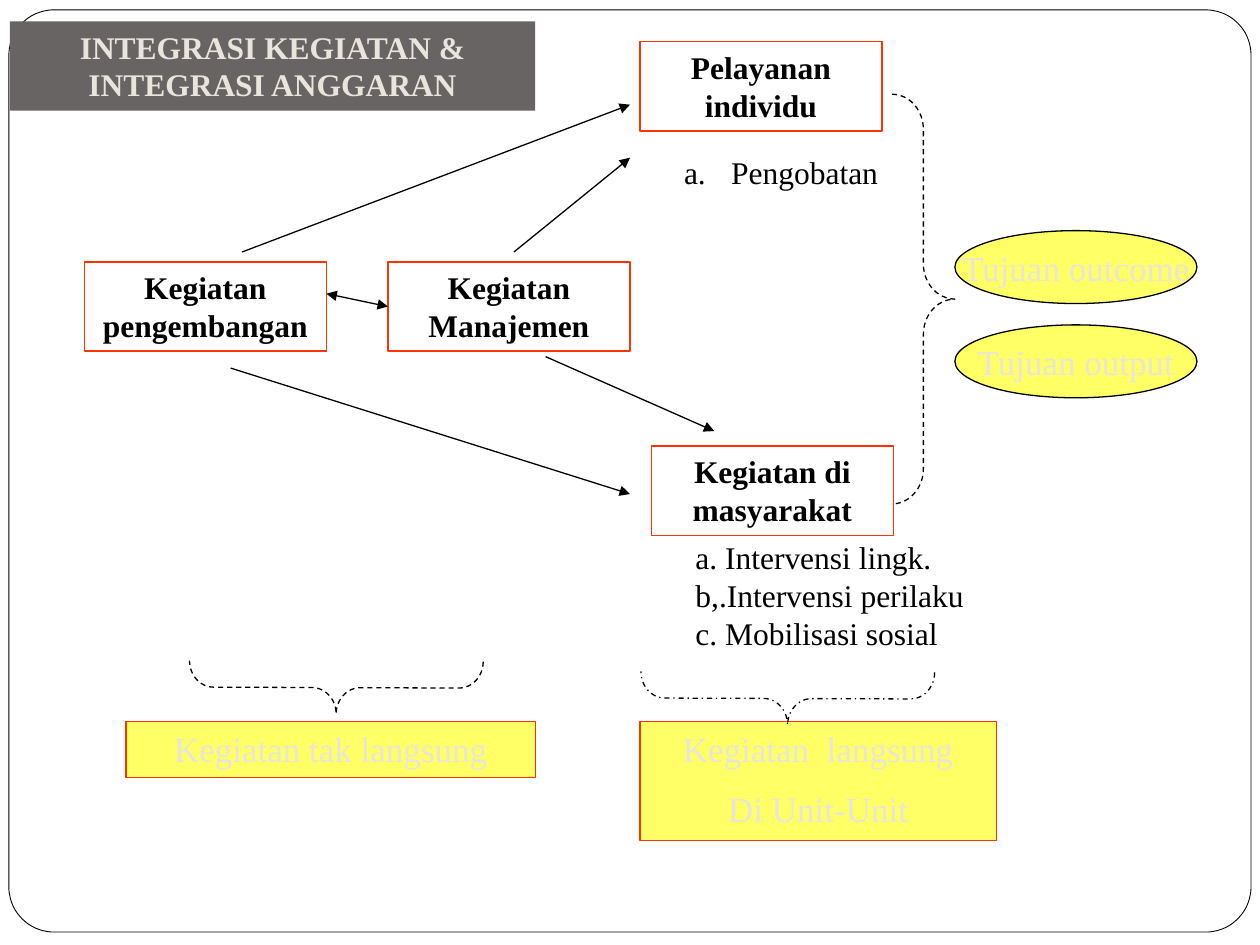
import pptx
import pptx.dml.color
import pptx.enum.dml
import pptx.enum.shapes
import pptx.enum.text
import pptx.oxml.ns
import pptx.util
from lxml import etree

Cm = pptx.util.Cm
Pt = pptx.util.Pt
Shape = pptx.enum.shapes.MSO_SHAPE
Align = pptx.enum.text.PP_ALIGN
Anchor = pptx.enum.text.MSO_ANCHOR
Dash = pptx.enum.dml.MSO_LINE

FONT = "Times New Roman"
BLACK, WHITE, RED = "000000", "FFFFFF", "FF3300"
YELLOW, GREY, CREAM = "FFFF66", "696464", "E9E5DC"
BOX_WIDTH, BOX_HEIGHT = 4.88, 1.8


def color(value):
    """Turn a hex string into a colour."""
    return pptx.dml.color.RGBColor.from_string(value)


def add_xml(parent, tag, **attributes):
    """Append a DrawingML element to a parent element."""
    return etree.SubElement(parent, pptx.oxml.ns.qn(tag), attributes)


def write(shape, text, size, ink, bold=False, align=Align.CENTER, anchor=Anchor.TOP, wrap=True):
    """Put formatted text in a shape."""
    frame = shape.text_frame
    frame.text = text
    frame.word_wrap = wrap
    frame.vertical_anchor = anchor
    frame.auto_size = pptx.enum.text.MSO_AUTO_SIZE.NONE
    for index, para in enumerate(frame.paragraphs):
        para.alignment = align
        para.space_before = Pt(size / 2 if index else 0)
        for span in para.runs:
            span.font.name = FONT
            span.font.size = Pt(size)
            span.font.bold = bold
            span.font.color.rgb = color(ink)


def draw_shape(page, kind, box, line, fill=None, weight=0.75, dash=None):
    """Draw a preset shape with a plain fill and outline."""
    shape = page.shapes.add_shape(kind, *map(Cm, box))
    shape.shadow.inherit = False
    if fill:
        shape.fill.solid()
        shape.fill.fore_color.rgb = color(fill)
    else:
        shape.fill.background()
    shape.line.color.rgb = color(line)
    shape.line.width = Pt(weight)
    if dash:
        shape.line.dash_style = dash
    return shape


def draw_arrow(page, start, end, both_ways=False):
    """Draw a straight arrow between two points."""
    arrow = page.shapes.add_connector(
        pptx.enum.shapes.MSO_CONNECTOR.STRAIGHT, *map(Cm, start + end))
    arrow.line.color.rgb = color(BLACK)
    arrow.line.width = Pt(0.75)
    outline = arrow.line._get_or_add_ln()
    if both_ways:
        add_xml(outline, "a:headEnd", type="triangle")
    add_xml(outline, "a:tailEnd", type="triangle")
    add_xml(arrow.element.spPr, "a:effectLst")
    return arrow


def draw_title(page, box):
    """Place the title on its grey band."""
    title = page.shapes.title
    title.left, title.top, title.width, title.height = map(Cm, box)
    title.fill.solid()
    title.fill.fore_color.rgb = color(GREY)
    write(title, "INTEGRASI KEGIATAN & INTEGRASI ANGGARAN", 18, CREAM, bold=True)


def draw_frame(page, box):
    """Draw the rounded page border behind the title."""
    border = draw_shape(page, Shape.ROUNDED_RECTANGLE, box, BLACK, WHITE, weight=0.5)
    border.adjustments[0] = 0.049
    page.shapes.title.element.addprevious(border.element)


def draw_note(page, box, text):
    """Write a left-aligned note and return its first paragraph."""
    note = page.shapes.add_textbox(*map(Cm, box))
    write(note, text, 18, BLACK, align=Align.LEFT)
    return note.text_frame.paragraphs[0]


def draw_activities(page, left, top):
    """Draw the four activities, their notes and the arrows between them."""
    activities = {}
    for text, x, y in (
        ("Kegiatan pengembangan", 0, 4.44),
        ("Kegiatan Manajemen", 6.12, 4.44),
        ("Pelayanan individu", 11.2, 0),
        ("Kegiatan di masyarakat", 11.43, 8.15),
    ):
        box = (left + x, top + y, BOX_WIDTH, BOX_HEIGHT)
        activities[text] = draw_shape(page, Shape.RECTANGLE, box, RED)
        write(activities[text], text, 18, BLACK, bold=True)

    item = draw_note(page, (left + 11.84, top + 2.13, 6.15, 1.02), "Pengobatan")
    settings = item._p.get_or_add_pPr()
    settings.set("marL", str(Cm(0.95)))
    settings.set("indent", str(-Cm(0.95)))
    add_xml(settings, "a:buFont", typeface=FONT)
    add_xml(settings, "a:buAutoNum", type="alphaLcPeriod")
    draw_note(page, (left + 12.07, top + 9.88, 6.15, 2.54),
              "a. Intervensi lingk.\vb,.Intervensi perilaku\vc. Mobilisasi sosial")

    exchange = draw_arrow(page, (left + BOX_WIDTH, top + 5.08),
                          (left + 6.12, top + 5.34), both_ways=True)
    exchange.end_connect(activities["Kegiatan Manajemen"], 1)
    for x1, y1, x2, y2 in (
        (3.18, 4.24, 11, 1.27),
        (2.95, 6.58, 11, 9.12),
        (8.66, 4.24, 11, 2.34),
        (9.3, 6.35, 12.7, 7.85),
    ):
        draw_arrow(page, (left + x1, top + y1), (left + x2, top + y2))


def draw_goals(page, left, top, height):
    """Draw the right brace and the two goal ellipses."""
    brace = draw_shape(page, Shape.RIGHT_BRACE, (left, top, 1.27, height), BLACK, dash=Dash.DASH)
    brace.adjustments[0] = 0.558
    for index, text in enumerate(("Tujuan outcome", "Tujuan output")):
        box = (left + 1.27, top + 2.75 + 1.9 * index, BOX_WIDTH, 1.47)
        goal = draw_shape(page, Shape.OVAL, box, BLACK, YELLOW)
        write(goal, text, 20, CREAM, anchor=Anchor.MIDDLE, wrap=False)


def draw_category(page, box, text, brace_center, dash):
    """Draw a yellow category box with a brace above it."""
    left, top = box[:2]
    category = draw_shape(page, Shape.RECTANGLE, box, RED, YELLOW)
    write(category, text, 20, CREAM)
    thickness, span = 1.07, 5.92
    x, y = brace_center
    brace_box = (left + x - thickness / 2, top + y - span / 2, thickness, span)
    brace = draw_shape(page, Shape.LEFT_BRACE, brace_box, BLACK, dash=dash)
    brace.adjustments[0] = 0.453
    brace.rotation = 270.2


def main():
    """Build and save the slide."""
    deck = pptx.Presentation()
    deck.slide_width, deck.slide_height = Cm(25.4), Cm(19.05)
    page = deck.slides.add_slide(deck.slide_layouts.get_by_name("Title Only"))
    draw_title(page, (0.2, 0.43, 10.59, 1.8))
    draw_frame(page, (0.18, 0.2, 25.04, 18.59))
    draw_activities(page, 1.7, 0.84)
    draw_goals(page, 17.98, 1.9, 8.26)
    draw_category(page, (2.54, 14.55, 8.26, 1.12), "Kegiatan tak langsung",
                  (4.24, -0.69), Dash.DASH)
    draw_category(page, (12.9, 14.55, 7.19, 2.39), "Kegiatan  langsung\nDi Unit-Unit",
                  (2.98, -0.47), Dash.DASH_DOT)
    deck.save("out.pptx")


if __name__ == "__main__":
    main()
